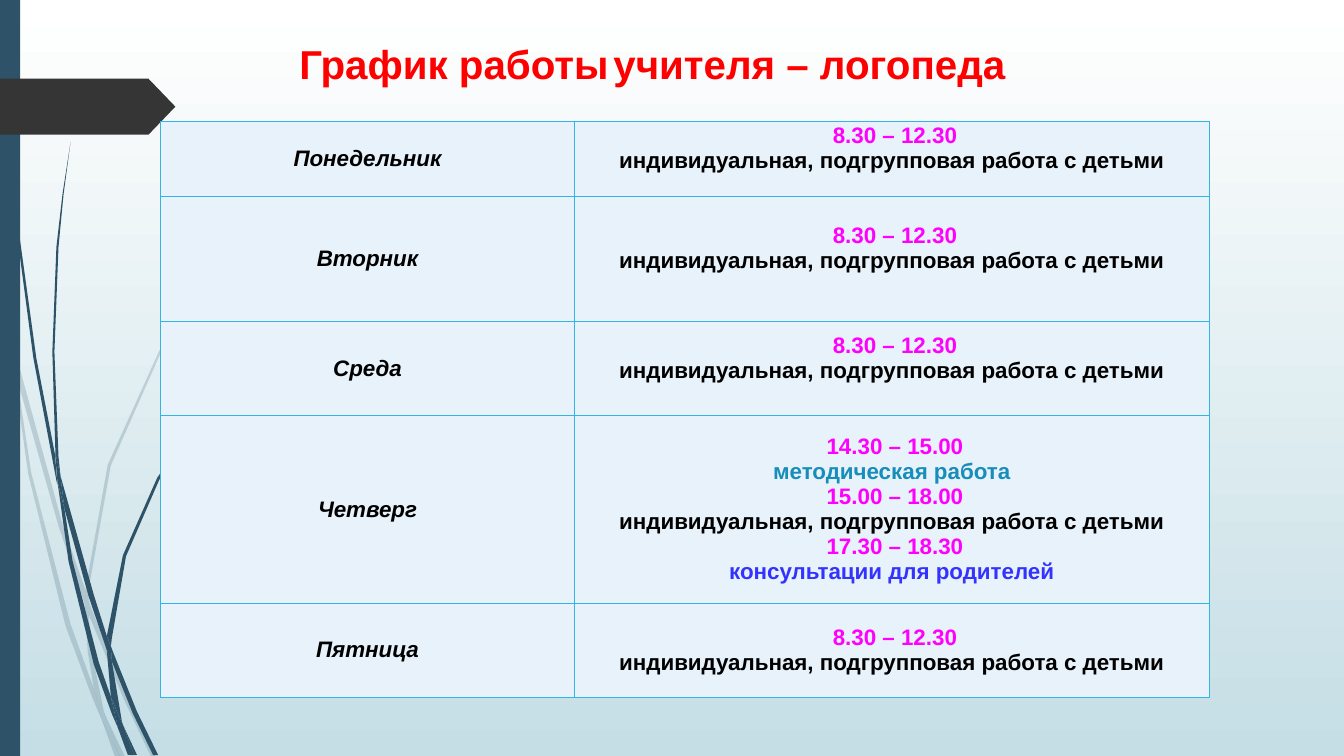
from dataclasses import dataclass

from lxml import etree
from pptx import Presentation
from pptx.dml.color import RGBColor
from pptx.enum.shapes import MSO_SHAPE
from pptx.enum.text import MSO_ANCHOR, MSO_AUTO_SIZE, PP_ALIGN
from pptx.oxml.ns import qn
from pptx.util import Pt

RECTANGLE, PENTAGON = MSO_SHAPE.RECTANGLE, MSO_SHAPE.PENTAGON
CENTER = PP_ALIGN.CENTER
TOP, MIDDLE = MSO_ANCHOR.TOP, MSO_ANCHOR.MIDDLE
NO_AUTOFIT = MSO_AUTO_SIZE.NONE

FONT = "Arial"
NAVY, CHARCOAL, RED, BLACK = "2E5369", "353535", "FF0000", "000000"
MAGENTA, TEAL, BLUE = "FF00FF", "178DBB", "3333FF"
CELL_FILL, CELL_BORDER = "E8F2FA", "31B4E6"
WHITE, MIST = "FFFFFF", "C5DEE5"

Outline = list[tuple[float, float]]


@dataclass
class Grass:
    """A tuft of grass: the outlines of its blade pieces, and their opacity."""
    opacity: int
    pieces: list[Outline]


@dataclass
class Line:
    text: str
    colour: str


@dataclass
class Day:
    name: str
    height: float
    lines: list[Line]
    lift: float = 0


PALE_GRASS = Grass(20, [
    [(7.9, 252), (6.5, 231.8), (0, 203), (0, 215.3), (7.2, 247.7)],
    [(41.8, 375.8), (60.5, 431.3), (61.2, 421.9), (44.6, 374.4), (10.1, 248.4),
     (12.2, 270.7)],
    [(66.2, 437), (63.4, 429.1), (63.4, 439.2), (88.6, 499.7), (108, 540.7),
     (111.6, 540.7), (91.4, 498.2)],
    [(85.7, 540.7), (89.3, 540.7), (75.6, 511.9)],
    [(67, 491.8), (50.4, 445.7), (22.3, 337.7), (12.2, 270.7), (7.9, 252),
     (20.2, 338.4), (46.8, 447.1), (66.2, 499), (72.7, 514.1), (71.3, 509)],
    [(60.5, 431.3), (62.6, 465.1), (67, 491.8), (69.1, 498.2), (75.6, 511.9),
     (74.2, 508.3), (65.5, 465.1), (63.4, 439.2), (63.4, 437.8)],
    [(63.4, 420.5), (79.2, 332.6), (115.2, 251.3), (164.9, 176.4), (193, 142.6),
     (208.8, 126), (224.6, 110.9), (224.6, 110.2), (208.1, 126), (193, 141.8),
     (164.2, 175.7), (113.8, 250.6), (77, 331.9), (61.2, 420.5), (61.2, 421.9),
     (63.4, 429.1)],
    [(72.7, 514.1), (82.1, 540.7), (85.7, 540.7)],
    [(63.4, 437.8), (63.4, 439.2), (63.4, 429.1), (61.2, 421.9), (60.5, 431.3)],
    [(69.1, 498.2), (67, 491.8), (71.3, 509), (72.7, 514.1), (85.7, 540.7),
     (75.6, 511.9)],
])
DARK_GRASS = Grass(100, [
    [(5, 79.2), (12.2, 167.8), (23.8, 255.6), (40.3, 343.4), (41, 346.3), (39.6, 329),
     (39.6, 326.2), (25.9, 255.6), (13.7, 167), (5.8, 78.5), (3.6, 34.6), (2.2, 0),
     (2.2, 34.6)],
    [(63.4, 426.2), (76.3, 464.4), (76.3, 454.3), (67, 424.8), (43.2, 339.8),
     (46.1, 363.6)],
    [(81.4, 467.3), (79.2, 461.5), (79.9, 472.3), (95, 509.8), (109.4, 539.3),
     (113, 539.3), (97.9, 508.3)],
    [(79.2, 497.5), (70.6, 473), (51.8, 400.3), (46.1, 363.6), (41, 343.4), (49, 401),
     (67, 474.5), (79.9, 509.8), (84.2, 519.8), (83.5, 516.2)],
    [(43.2, 339.8), (41.8, 326.2), (38.9, 251.3), (41.8, 176.4), (45.4, 139),
     (50.4, 101.5), (44.6, 139), (40.3, 176.4), (37.4, 251.3), (39.6, 323.3)],
    [(95.8, 539.3), (97.9, 539.3), (87.8, 517.7)],
    [(41, 343.4), (46.1, 363.6), (43.2, 339.8), (39.6, 323.3), (39.6, 326.2)],
    [(79.9, 455.8), (90, 397.4), (113.8, 342.7), (147.6, 292.3), (166.3, 269.3),
     (187.9, 247.7), (187.2, 247.7), (166.3, 268.6), (146.9, 291.6), (112.3, 341.3),
     (87.8, 396.7), (76.3, 454.3), (79.2, 461.5)],
    [(84.2, 519.8), (91.4, 539.3), (94.3, 539.3)],
    [(76.3, 464.4), (79.2, 497.5), (83.5, 508.3), (87.8, 517.7), (87.1, 515.5),
     (79.9, 472.3), (78.5, 468.7)],
    [(76.3, 464.4), (78.5, 468.7), (79.9, 472.3), (79.2, 461.5), (76.3, 454.3)],
    [(83.5, 508.3), (79.2, 497.5), (83.5, 516.2), (84.2, 519.8), (93.6, 539.3),
     (95.8, 539.3), (87.8, 517.7)],
])

WORK = Line("индивидуальная, подгрупповая работа с детьми", BLACK)
MORNING = [Line(" 8.30 – 12.30", MAGENTA), WORK]
DAYS = [
    Day("Понедельник", 53.5, MORNING, 15),
    Day("Вторник", 89.3, MORNING, 15),
    Day("Среда", 67.2, MORNING, 14),
    Day("Четверг", 134.2, [
        Line(" 14.30 – 15.00", MAGENTA), Line("методическая работа", TEAL),
        Line(" 15.00 – 18.00", MAGENTA), WORK,
        Line(" 17.30 – 18.30", MAGENTA), Line("консультации для родителей", BLUE)]),
    Day("Пятница", 67.2, MORNING),
]


def rgb(colour: str) -> RGBColor:
    return RGBColor.from_string(colour)


def paint(shape, colour: str) -> None:
    shape.shadow.inherit = False
    shape.fill.solid()
    shape.fill.fore_color.rgb = rgb(colour)
    shape.line.fill.background()


def add_span(para, text: str, size: float, colour: str, bold=True, italic=False) -> None:
    span = para.add_run()
    span.text = text
    span.font.name = FONT
    span.font.size = Pt(size)
    span.font.bold = bold
    span.font.italic = italic
    span.font.color.rgb = rgb(colour)


def add_grass(page, grass: Grass) -> None:
    for piece in grass.pieces:
        start, *others = [(Pt(x), Pt(y)) for x, y in piece]
        builder = page.shapes.build_freeform(*start)
        builder.add_line_segments(others, close=True)
        shape = builder.convert_to_shape()
        paint(shape, NAVY)
        if grass.opacity < 100:
            for tint in shape._element.spPr.iter(qn("a:srgbClr")):
                etree.SubElement(tint, qn("a:alpha"), val=str(grass.opacity * 1000))


def add_block(page, kind, left: float, top: float, width: float, height: float,
              colour: str):
    block = page.shapes.add_shape(kind, Pt(left), Pt(top), Pt(width), Pt(height))
    paint(block, colour)
    return block


def add_title(page) -> None:
    title = page.shapes.title
    title.left, title.top, title.width, title.height = Pt(168), Pt(24.5), Pt(596), Pt(62.5)
    frame = title.text_frame
    frame.word_wrap = True
    frame.auto_size = NO_AUTOFIT
    frame.vertical_anchor = TOP
    frame.margin_top = Pt(3.7)
    para = frame.paragraphs[0]
    para.alignment = CENTER
    add_span(para, "График работы", 28.8, RED)
    add_span(para, " ", 11.7, RED, bold=False)
    add_span(para, "учителя – логопеда", 28.8, RED)


def fill_cell(cell, lines: list[Line], italic: bool = False, lift: float = 0) -> None:
    properties = cell._tc.get_or_add_tcPr()
    for side in ("a:lnL", "a:lnR", "a:lnT", "a:lnB"):
        border = etree.SubElement(properties, qn(side), w=str(Pt(1)))
        solid = etree.SubElement(border, qn("a:solidFill"))
        etree.SubElement(solid, qn("a:srgbClr"), val=CELL_BORDER)
    cell.fill.solid()
    cell.fill.fore_color.rgb = rgb(CELL_FILL)
    cell.vertical_anchor = MIDDLE
    cell.margin_left = cell.margin_right = Pt(2)
    cell.margin_top, cell.margin_bottom = Pt(0), Pt(lift)
    for index, line in enumerate(lines):
        frame = cell.text_frame
        para = frame.add_paragraph() if index else frame.paragraphs[0]
        para.alignment = CENTER
        add_span(para, line.text, 16, line.colour, italic=italic)


def add_schedule(page) -> None:
    height = sum(day.height for day in DAYS)
    table = page.shapes.add_table(len(DAYS), 2, Pt(114.8), Pt(86.7), Pt(749), Pt(height)).table
    table.first_row = table.horz_banding = False
    table.columns[0].width, table.columns[1].width = Pt(295.5), Pt(453.5)
    for index, day in enumerate(DAYS):
        table.rows[index].height = Pt(day.height)
        fill_cell(table.cell(index, 0), [Line(day.name, BLACK)], italic=True)
        fill_cell(table.cell(index, 1), day.lines, lift=day.lift)


def main() -> None:
    deck = Presentation()
    deck.slide_width, deck.slide_height = Pt(960), Pt(540)
    page = deck.slides.add_slide(deck.slide_layouts.get_by_name("Title Only"))
    backdrop = page.background.fill
    backdrop.gradient()
    backdrop.gradient_angle = 270
    for stop, colour in zip(backdrop.gradient_stops, (WHITE, MIST)):
        stop.color.rgb = rgb(colour)
    for grass in (PALE_GRASS, DARK_GRASS):
        add_grass(page, grass)
    add_block(page, RECTANGLE, 0, 0, 14.4, 540, NAVY)
    arrow = add_block(page, PENTAGON, 0, 56.2, 125.3, 40, CHARCOAL)
    arrow.adjustments[0] = 0.48
    add_title(page)
    add_schedule(page)
    deck.save("out.pptx")


if __name__ == "__main__":
    main()
